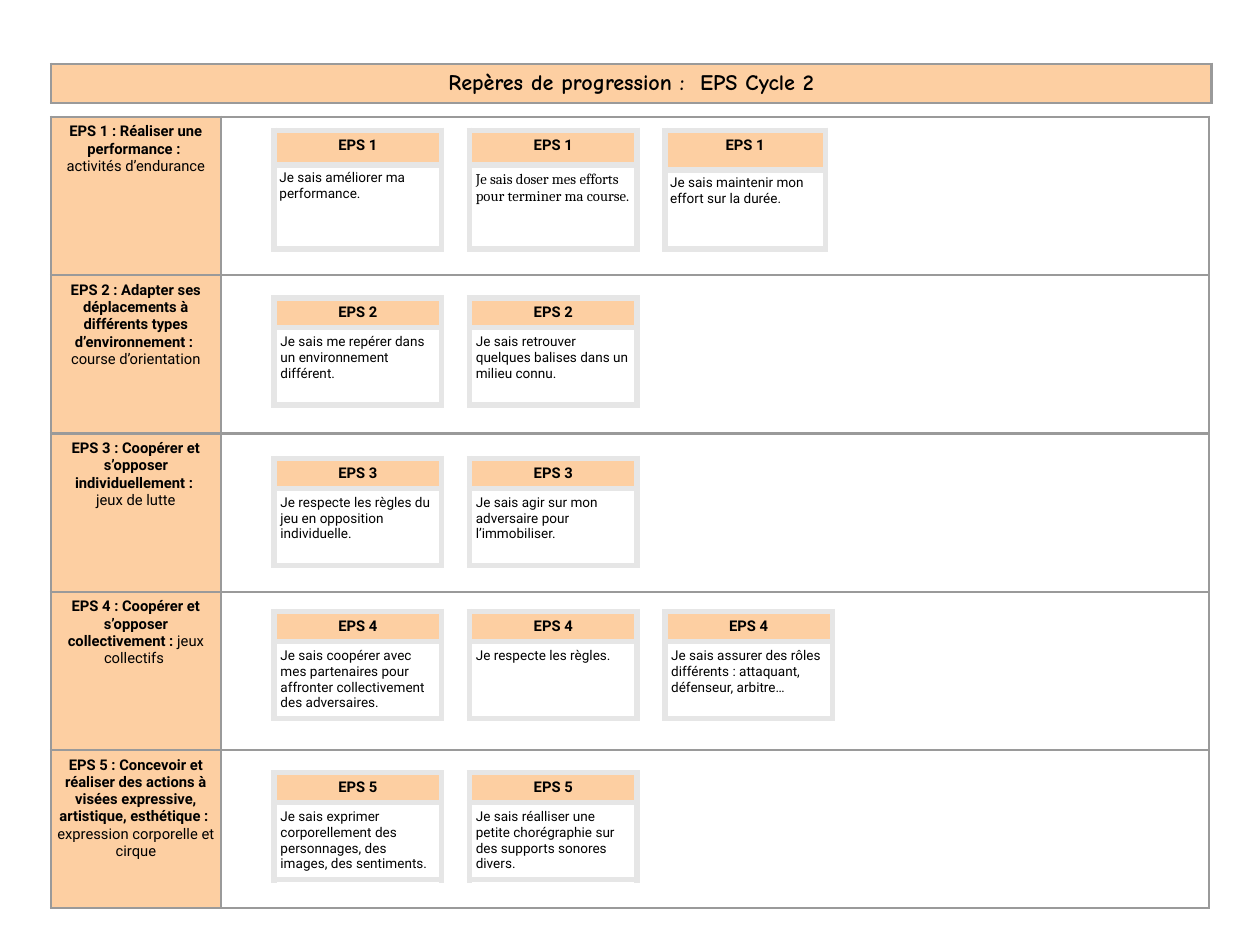
from typing import NamedTuple

from lxml.etree import SubElement
from pptx import Presentation
from pptx.dml.color import RGBColor
from pptx.enum.text import PP_ALIGN
from pptx.oxml.ns import qn
from pptx.util import Cm, Pt

COLORS = {
    "peach": "FDCFA2",
    "white": "FFFFFF",
    "black": "000000",
    "grid_line": "9A9A9A",
    "card_line": "E6E6E6",
}


class Card(NamedTuple):
    statement: str
    font: str = "Roboto"
    size: int = 11
    width: float = 4.8
    heading_height: float = 0.86
    statement_height: float = 2.21
    margin: float = 0.18


class Domain(NamedTuple):
    code: str
    goal: list
    cards_top: float
    cards: list


DOMAINS = [
    Domain("EPS 1", [[("EPS 1 : Réaliser une performance : ", True)],
                     [("activités d’endurance", False)]], 3.74, [
        Card("Je sais améliorer ma performance.",
             heading_height=0.99, statement_height=2.41, margin=0.15),
        Card("Je sais doser mes efforts pour terminer ma course.",
             font="Cambria", size=12, heading_height=0.99, statement_height=2.41),
        Card("Je sais maintenir mon effort sur la durée.", width=4.6,
             heading_height=1.14, statement_height=2.26, margin=0.15),
    ]),
    Domain("EPS 2", [[("EPS 2 : Adapter ses déplacements à différents types "
                       "d’environnement : ", True)],
                     [("course d’orientation", False)]], 8.54, [
        Card("Je sais me repérer dans un environnement différent."),
        Card("Je sais retrouver quelques balises dans un milieu connu."),
    ]),
    Domain("EPS 3", [[("EPS 3 : Coopérer et s’opposer individuellement : ", True)],
                     [("jeux de lutte", False)]], 13.15, [
        Card("Je respecte les règles du jeu en opposition individuelle."),
        Card("Je sais agir sur mon adversaire pour l’immobiliser."),
    ]),
    Domain("EPS 4", [[("EPS 4 : Coopérer et s’opposer collectivement : ", True),
                      ("jeux collectifs ", False)]], 17.54, [
        Card("Je sais coopérer avec mes partenaires pour affronter "
             "collectivement des adversaires."),
        Card("Je respecte les règles."),
        Card("Je sais assurer des rôles différents : attaquant, défenseur, arbitre…"),
    ]),
    Domain("EPS 5", [[("EPS 5 : Concevoir et réaliser des actions à visées "
                       "expressive, artistique, esthétique : ", True)],
                     [("expression corporelle et cirque", False)]], 22.16, [
        Card("Je sais exprimer corporellement des personnages, des images, "
             "des sentiments."),
        Card("Je sais réalliser une petite chorégraphie sur des supports "
             "sonores divers."),
    ]),
]

GRID_LEFT, GRID_TOP = 1.46, 3.35
GOAL_WIDTH, CARDS_WIDTH, DOMAIN_HEIGHT = 4.87, 28.32, 4.54
TITLE_TOP, TITLE_WIDTH, TITLE_HEIGHT = 1.83, 33.27, 1.12
CARDS_LEFT, CARD_STEP = 7.86, 5.6


def color(name):
    return RGBColor.from_string(COLORS[name])


def write(cell, paragraphs, size, font="Roboto", align=PP_ALIGN.CENTER):
    frame = cell.text_frame
    for index, runs in enumerate(paragraphs):
        paragraph = frame.paragraphs[0] if index == 0 else frame.add_paragraph()
        paragraph.alignment = align
        for text, bold in runs:
            run = paragraph.add_run()
            run.text = text
            run.font.name = font
            run.font.size = Pt(size)
            run.font.bold = bold
            run.font.color.rgb = color("black")


def format_cell(cell, line_color, line_width, fill=None, margin=0.18):
    cell.margin_left = cell.margin_right = Cm(margin)
    cell.margin_top = cell.margin_bottom = Cm(margin)
    properties = cell._tc.get_or_add_tcPr()
    for side in ("a:lnL", "a:lnR", "a:lnT", "a:lnB"):
        border = SubElement(properties, qn(side), w=str(Pt(line_width)))
        solid = SubElement(border, qn("a:solidFill"))
        SubElement(solid, qn("a:srgbClr"), val=COLORS[line_color])
    if fill:
        cell.fill.solid()
        cell.fill.fore_color.rgb = color(fill)
    else:
        cell.fill.background()


def add_plain_table(slide, left, top, widths, heights):
    table = slide.shapes.add_table(
        len(heights), len(widths), Cm(left), Cm(top),
        Cm(sum(widths)), Cm(sum(heights))).table
    table.first_row = False
    table.horz_banding = False
    for column, width in zip(table.columns, widths):
        column.width = Cm(width)
    for row, height in zip(table.rows, heights):
        row.height = Cm(height)
    return table


def add_title_banner(slide, text):
    banner = add_plain_table(slide, GRID_LEFT, TITLE_TOP,
                             [TITLE_WIDTH], [TITLE_HEIGHT])
    title = banner.cell(0, 0)
    format_cell(title, "grid_line", 2, "peach")
    write(title, [[(text, True)]], 18, "Comic Neue")


def add_domain_grid(slide):
    grid = add_plain_table(slide, GRID_LEFT, GRID_TOP, [GOAL_WIDTH, CARDS_WIDTH],
                           [DOMAIN_HEIGHT] * len(DOMAINS))
    for row, domain in enumerate(DOMAINS):
        goal = grid.cell(row, 0)
        format_cell(goal, "grid_line", 2, "peach")
        write(goal, domain.goal, 12)
        format_cell(grid.cell(row, 1), "grid_line", 2)


def add_card(slide, left, top, code, card):
    table = add_plain_table(slide, left, top, [card.width],
                            [card.heading_height, card.statement_height])
    heading, statement = table.cell(0, 0), table.cell(1, 0)
    format_cell(heading, "card_line", 5, "peach")
    write(heading, [[(code, True)]], 12)
    format_cell(statement, "card_line", 5, "white", card.margin)
    write(statement, [[(card.statement, False)]], card.size,
          card.font, PP_ALIGN.LEFT)


def main():
    presentation = Presentation()
    presentation.slide_width, presentation.slide_height = Cm(36.12), Cm(27.1)
    slide = presentation.slides.add_slide(presentation.slide_layouts[6])
    add_title_banner(slide, "Repères de progression :  EPS Cycle 2")
    add_domain_grid(slide)
    for domain in DOMAINS:
        for position, card in enumerate(domain.cards):
            add_card(slide, CARDS_LEFT + position * CARD_STEP,
                     domain.cards_top, domain.code, card)
    presentation.save("out.pptx")


if __name__ == "__main__":
    main()
